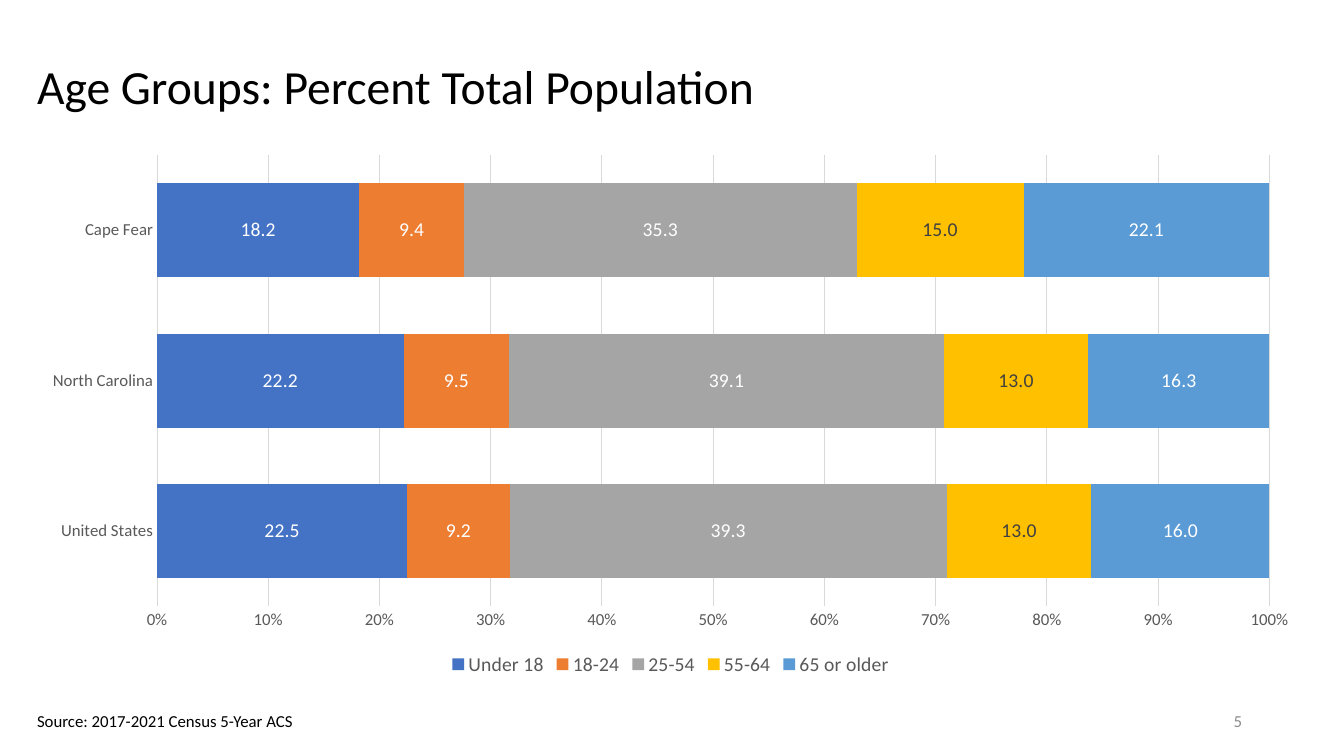
import pptx
import pptx.chart.data
import pptx.dml.color
import pptx.enum.chart
import pptx.enum.text
import pptx.util

RGBColor = pptx.dml.color.RGBColor
BLACK = RGBColor(0x00, 0x00, 0x00)
WHITE = RGBColor(0xFF, 0xFF, 0xFF)
CHARCOAL = RGBColor(0x40, 0x40, 0x40)
AXIS_GRAY = RGBColor(0x59, 0x59, 0x59)
NUMBER_GRAY = RGBColor(0x8C, 0x8C, 0x8C)
GRID_GRAY = RGBColor(0xD9, 0xD9, 0xD9)
BLUE = RGBColor(0x44, 0x72, 0xC4)
ORANGE = RGBColor(0xED, 0x7D, 0x31)
GRAY = RGBColor(0xA5, 0xA5, 0xA5)
GOLD = RGBColor(0xFF, 0xC0, 0x00)
SKY = RGBColor(0x5B, 0x9B, 0xD5)

COLUMNS, ROWS = 48, 27
MARGIN = 0.97
CONTENT_WIDTH = COLUMNS - 2 * MARGIN - 0.1

REGIONS = ["United States", "North Carolina", "Cape Fear"]
AGE_GROUPS = [
    ("Under 18", (22.5, 22.2, 18.2), BLUE, WHITE),
    ("18-24", (9.2, 9.5, 9.4), ORANGE, WHITE),
    ("25-54", (39.3, 39.1, 35.3), GRAY, WHITE),
    ("55-64", (13.0, 13.0, 15.0), GOLD, CHARCOAL),
    ("65 or older", (16.0, 16.3, 22.1), SKY, WHITE),
]


def set_font(font, size, color, name="Calibri"):
    font.name = name
    font.size = pptx.util.Pt(size)
    font.color.rgb = color


def write_text(frame, text, size=12, color=BLACK, align=None, line_spacing=None):
    para = frame.paragraphs[0]
    para.alignment = align
    para.line_spacing = line_spacing
    span = para.add_run()
    span.text = text
    set_font(span.font, size, color)


class AgeSlide:
    """Holds the chart style and the current page, and adds elements on a grid."""

    def __init__(self, deck):
        self.page = deck.slides.add_slide(deck.slide_layouts[6])
        self.column = deck.slide_width / COLUMNS
        self.row = deck.slide_height / ROWS
        self.line_width = pptx.util.Pt(0.75)
        self.value_format = "#,##0.0"

    def place(self, left, top, width, height):
        return (int(left * self.column), int(top * self.row),
                int(width * self.column), int(height * self.row))

    def add_text(self, area, text, wrap=True,
                 anchor=pptx.enum.text.MSO_ANCHOR.MIDDLE, **style):
        frame = self.page.shapes.add_textbox(*self.place(*area)).text_frame
        frame.word_wrap = wrap
        frame.vertical_anchor = anchor
        write_text(frame, text, **style)

    def add_age_chart(self, area):
        data = pptx.chart.data.CategoryChartData(number_format=self.value_format)
        data.categories = REGIONS
        for name, values, _, _ in AGE_GROUPS:
            data.add_series(name, values)
        chart = self.page.shapes.add_chart(
            pptx.enum.chart.XL_CHART_TYPE.BAR_STACKED_100, *self.place(*area), data).chart
        set_font(chart.font, 10, BLACK)
        chart.has_title = False
        plot = chart.plots[0]
        plot.gap_width, plot.overlap, plot.vary_by_categories = 60, 100, False
        for series, (_, _, fill, label_color) in zip(plot.series, AGE_GROUPS):
            self.style_series(series, fill, label_color)
        self.style_axes(chart)
        chart.has_legend = True
        chart.legend.position = pptx.enum.chart.XL_LEGEND_POSITION.BOTTOM
        chart.legend.include_in_layout = False
        set_font(chart.legend.font, 14, AXIS_GRAY)

    def style_series(self, series, fill, label_color):
        series.format.fill.solid()
        series.format.fill.fore_color.rgb = fill
        series.invert_if_negative = False
        labels = series.data_labels
        labels.show_value = True
        labels.number_format = self.value_format
        labels.number_format_is_linked = False
        labels.position = pptx.enum.chart.XL_LABEL_POSITION.CENTER
        set_font(labels.font, 14, label_color)

    def style_axes(self, chart):
        category, value = chart.category_axis, chart.value_axis
        for axis in (category, value):
            axis.major_tick_mark = pptx.enum.chart.XL_TICK_MARK.NONE
            axis.minor_tick_mark = pptx.enum.chart.XL_TICK_MARK.NONE
            set_font(axis.tick_labels.font, 12, AXIS_GRAY)
        value.has_major_gridlines = True
        for line in (category.format.line, value.major_gridlines.format.line):
            line.color.rgb = GRID_GRAY
            line.width = self.line_width
        value.format.line.fill.background()
        value.tick_labels.number_format = "0%"
        value.tick_labels.number_format_is_linked = False


def main():
    deck = pptx.Presentation()
    deck.slide_width = pptx.util.Inches(13.33)
    deck.slide_height = pptx.util.Inches(7.5)
    slide = AgeSlide(deck)
    slide.add_text((MARGIN, 1.22, CONTENT_WIDTH, 3.92),
                   "Age Groups: Percent Total Population", size=34, line_spacing=0.9)
    slide.add_age_chart((MARGIN, 5.15, CONTENT_WIDTH, 19.15))
    slide.add_text((MARGIN, 25.2, 10, 1.08), "Source: 2017-2021 Census 5-Year ACS",
                   wrap=False, anchor=pptx.enum.text.MSO_ANCHOR.TOP)
    slide.add_text((33.92, 25.02, 10.8, 1.44), "5", color=NUMBER_GRAY,
                   align=pptx.enum.text.PP_ALIGN.RIGHT)
    deck.save("out.pptx")


if __name__ == "__main__":
    main()
